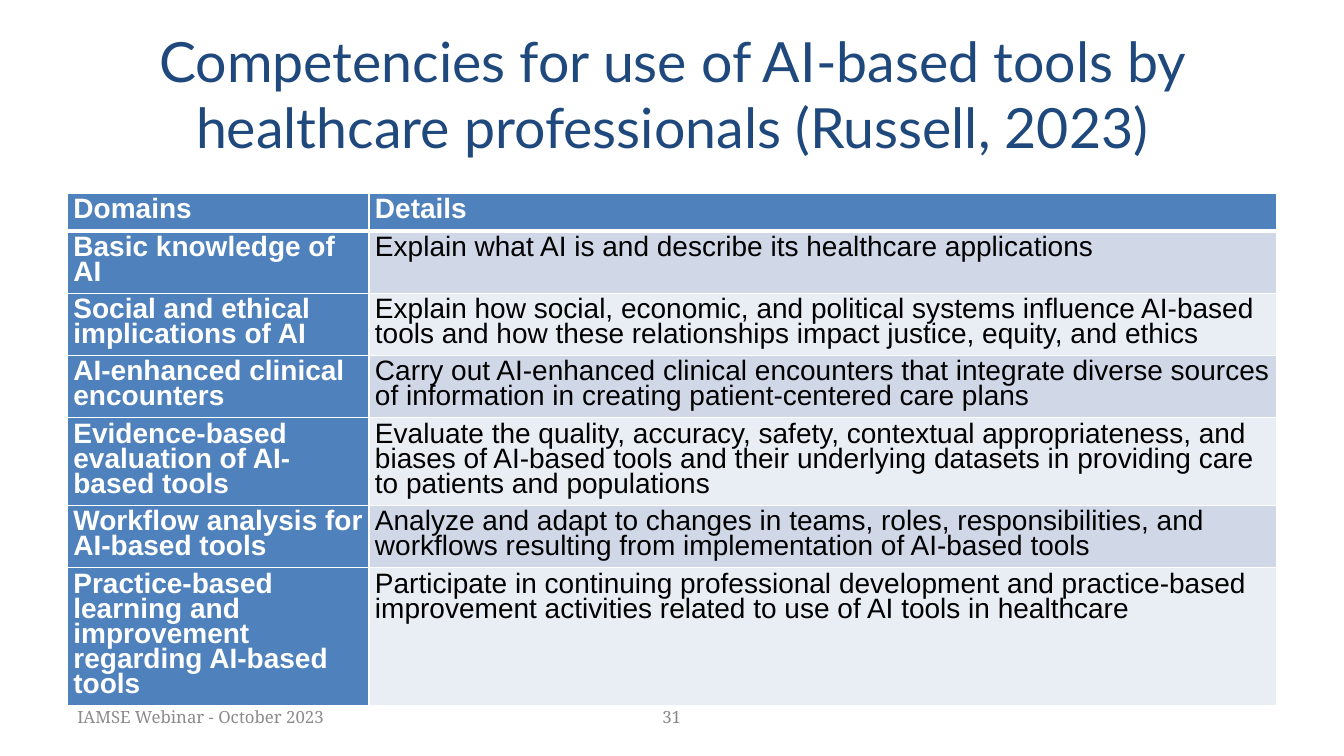
from lxml import etree
from pptx import Presentation
from pptx import util as u
from pptx.dml.color import RGBColor
from pptx.enum import text
from pptx.oxml import ns

NAVY = RGBColor(0x1F, 0x49, 0x7D)
BLUE = RGBColor(0x4F, 0x81, 0xBD)
BANDS = RGBColor(0xD0, 0xD8, 0xE8), RGBColor(0xE9, 0xED, 0xF4)
WHITE = RGBColor(0xFF, 0xFF, 0xFF)
BLACK = RGBColor(0, 0, 0)
NUMBER_GREY = RGBColor(0x89, 0x89, 0x89)
FOOTER_GREY = RGBColor(0x8C, 0x8C, 0x8C)

INSET = 0.15
LINE_HEIGHT = 0.635
DOMAIN_WIDTH = 7.6

# domain, details, lines of text in the taller cell
COMPETENCIES = [
    ("Domains", "Details", 1),
    ("Basic knowledge of AI",
     "Explain what AI is and describe its healthcare applications", 2),
    ("Social and ethical implications of AI",
     "Explain how social, economic, and political systems influence AI-based tools "
     "and how these relationships impact justice, equity, and ethics", 2),
    ("AI-enhanced clinical encounters",
     "Carry out AI-enhanced clinical encounters that integrate diverse sources of "
     "information in creating patient-centered care plans", 2),
    ("Evidence-based evaluation of AI-based tools",
     "Evaluate the quality, accuracy, safety, contextual appropriateness, and biases "
     "of AI-based tools and their underlying datasets in providing care to patients "
     "and populations", 3),
    ("Workflow analysis for AI-based tools",
     "Analyze and adapt to changes in teams, roles, responsibilities, and workflows "
     "resulting from implementation of AI-based tools", 2),
    ("Practice-based learning and improvement regarding AI-based tools",
     "Participate in continuing professional development and practice-based "
     "improvement activities related to use of AI tools in healthcare", 5),
]


def add_run(p, words, font, size, color, bold=False):
    r = p.add_run()
    r.text = words
    r.font.name, r.font.size, r.font.bold = font, u.Pt(size), bold
    r.font.color.rgb = color


def set_borders(cell, top, bottom):
    """Draw white cell borders; top and bottom are widths in points."""
    tcPr = cell._tc.get_or_add_tcPr()
    for tag, width in (("a:lnL", 1), ("a:lnR", 1), ("a:lnT", top), ("a:lnB", bottom)):
        ln = etree.SubElement(tcPr, ns.qn(tag), w=str(u.Pt(width)))
        fill = etree.SubElement(ln, ns.qn("a:solidFill"))
        etree.SubElement(fill, ns.qn("a:srgbClr"), val=str(WHITE))


def place_title(s, words, left, top, width, height):
    sp = s.shapes.title
    sp.left, sp.top, sp.width, sp.height = map(u.Cm, (left, top, width, height))
    tf = sp.text_frame
    tf.word_wrap = True
    tf.auto_size = text.MSO_AUTO_SIZE.NONE
    tf.vertical_anchor = text.MSO_ANCHOR.MIDDLE
    p = tf.paragraphs[0]
    p.alignment = text.PP_ALIGN.CENTER
    add_run(p, words, "Lato", 39.6, NAVY)


def fill_cell(cell, words, row, is_domain):
    is_head = row == 0 or is_domain
    set_borders(cell, 3 if row == 1 else 1, 3 if row == 0 else 1)
    cell.fill.solid()
    cell.fill.fore_color.rgb = BLUE if is_head else BANDS[(row - 1) % 2]
    cell.margin_left = cell.margin_right = u.Cm(INSET)
    cell.margin_top = cell.margin_bottom = u.Cm(INSET)
    p = cell.text_frame.paragraphs[0]
    p.line_spacing = u.Pt(18)
    add_run(p, words, "Arial", 20, WHITE if is_head else BLACK, is_head)


def place_competencies(s, left, top, width):
    heights = [2 * INSET + LINE_HEIGHT * lines for _, _, lines in COMPETENCIES]
    table = s.shapes.add_table(len(COMPETENCIES), 2, u.Cm(left), u.Cm(top),
                               u.Cm(width), u.Cm(sum(heights))).table
    table.first_col = True
    table.columns[0].width = u.Cm(DOMAIN_WIDTH)
    table.columns[1].width = u.Cm(width - DOMAIN_WIDTH)
    for row, (domain, details, _) in enumerate(COMPETENCIES):
        table.rows[row].height = u.Cm(heights[row])
        fill_cell(table.cell(row, 0), domain, row, True)
        fill_cell(table.cell(row, 1), details, row, False)


def place_footer(s, words, color, align, left, top, width, height):
    tf = s.shapes.add_textbox(*map(u.Cm, (left, top, width, height))).text_frame
    tf.word_wrap = True
    tf.vertical_anchor = text.MSO_ANCHOR.MIDDLE
    p = tf.paragraphs[0]
    p.alignment = align
    add_run(p, words, "Noto Serif", 12, color)


def main():
    prs = Presentation()
    prs.slide_width, prs.slide_height = u.Cm(33.87), u.Cm(19.05)
    s = prs.slides.add_slide(prs.slide_layouts[5])
    place_title(s, "Competencies for use of AI-based tools by healthcare "
                   "professionals (Russell, 2023)", 1.7, 0.76, 30.48, 3.18)
    place_competencies(s, 1.7, 4.88, 30.48)
    place_footer(s, "31", NUMBER_GREY, text.PP_ALIGN.CENTER, 13.54, 17.58, 6.78, 0.97)
    place_footer(s, "IAMSE Webinar - October 2023", FOOTER_GREY, text.PP_ALIGN.LEFT,
                 1.7, 17.58, 11.43, 0.97)
    prs.save("out.pptx")


if __name__ == "__main__":
    main()
